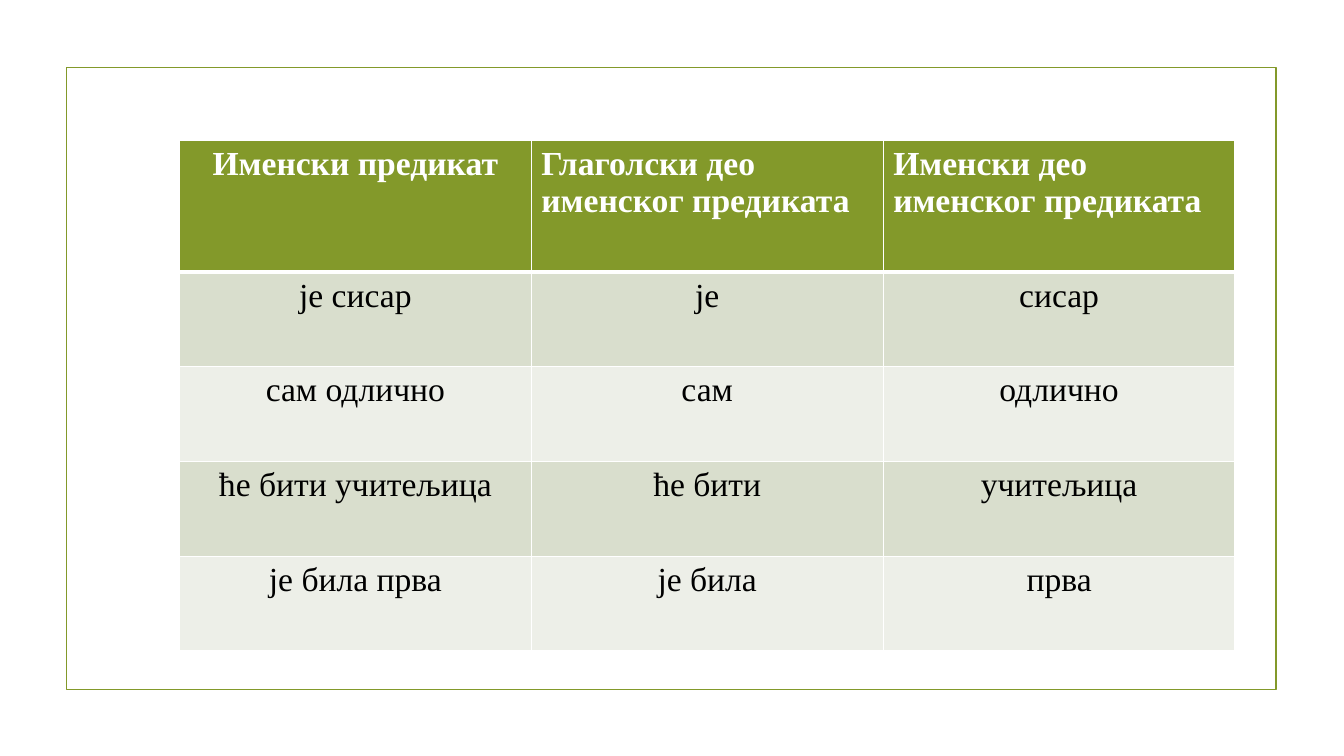
from lxml import etree
from pptx import Presentation
from pptx.dml.color import RGBColor
from pptx.enum.shapes import MSO_SHAPE
from pptx.enum.text import PP_ALIGN
from pptx.oxml.ns import qn
from pptx.util import Inches, Pt

RECTANGLE = MSO_SHAPE.RECTANGLE
LEFT, CENTER = PP_ALIGN.LEFT, PP_ALIGN.CENTER

WIDTH, HEIGHT = 13.33, 7.5
COLORS = {
    "olive": "83992A",
    "band": "D9DECD",
    "pale": "EDEFE8",
    "white": "FFFFFF",
    "black": "000000",
}
HEADINGS = [
    "Именски предикат",
    "Глаголски део именског предиката",
    "Именски део именског предиката",
]
PREDICATES = [("је", "сисар"), ("сам", "одлично"), ("ће бити", "учитељица"), ("је била", "прва")]


def rgb(name):
    return RGBColor.from_string(COLORS[name])


def write(frame, text, color="black", bold=False, align=CENTER, size=24, font="Times New Roman"):
    paragraph = frame.paragraphs[0]
    paragraph.alignment = align
    run = paragraph.add_run()
    run.text = text
    run.font.name = font
    run.font.size = Pt(size)
    run.font.bold = bold
    run.font.color.rgb = rgb(color)


class PredicateSlide:
    def __init__(self, deck):
        self.slide = deck.slides.add_slide(deck.slide_layouts[6])
        self.width, self.height = deck.slide_width, deck.slide_height

    def place(self, left, top, width, height):
        return (
            round(left * self.width),
            round(top * self.height),
            round(width * self.width),
            round(height * self.height),
        )

    def border(self, cell, side, points):
        line = etree.SubElement(cell._tc.get_or_add_tcPr(), qn(f"a:ln{side}"), w=str(Pt(points)))
        fill = etree.SubElement(line, qn("a:solidFill"))
        etree.SubElement(fill, qn("a:srgbClr"), val=COLORS["white"])

    def frame(self, *area):
        outline = self.slide.shapes.add_shape(RECTANGLE, *self.place(*area))
        outline.shadow.inherit = False
        outline.fill.background()
        outline.line.color.rgb = rgb("olive")
        outline.line.width = Pt(1.25)

    def table(self, rows, heights, *area):
        graphic = self.slide.shapes.add_table(len(rows), len(rows[0]), *self.place(*area))
        grid = graphic.table
        for row, height in zip(grid.rows, heights):
            row.height = round(height * self.height)
        for r, texts in enumerate(rows):
            for c, text in enumerate(texts):
                self.cell(grid.cell(r, c), text, r, c)

    def cell(self, cell, text, row, column):
        heading = row == 0
        widths = {"L": 1, "R": 1, "T": 3 if row == 1 else 1, "B": 3 if heading else 1}
        for side, points in widths.items():
            self.border(cell, side, points)
        cell.fill.solid()
        cell.fill.fore_color.rgb = rgb("olive" if heading else "band" if row % 2 else "pale")
        write(
            cell.text_frame,
            text,
            color="white" if heading else "black",
            bold=heading,
            align=LEFT if heading and column else CENTER,
        )


def main():
    deck = Presentation()
    deck.slide_width, deck.slide_height = Inches(WIDTH), Inches(HEIGHT)
    page = PredicateSlide(deck)
    page.frame(0.66 / WIDTH, 0.67 / HEIGHT, 12 / WIDTH, 6.17 / HEIGHT)
    rows = [HEADINGS] + [(f"{verb} {noun}", verb, noun) for verb, noun in PREDICATES]
    heights = [1.31 / HEIGHT] + [0.94 / HEIGHT] * len(PREDICATES)
    page.table(rows, heights, 1.78 / WIDTH, 1.39 / HEIGHT, 10.47 / WIDTH, sum(heights))
    deck.save("out.pptx")


if __name__ == "__main__":
    main()
